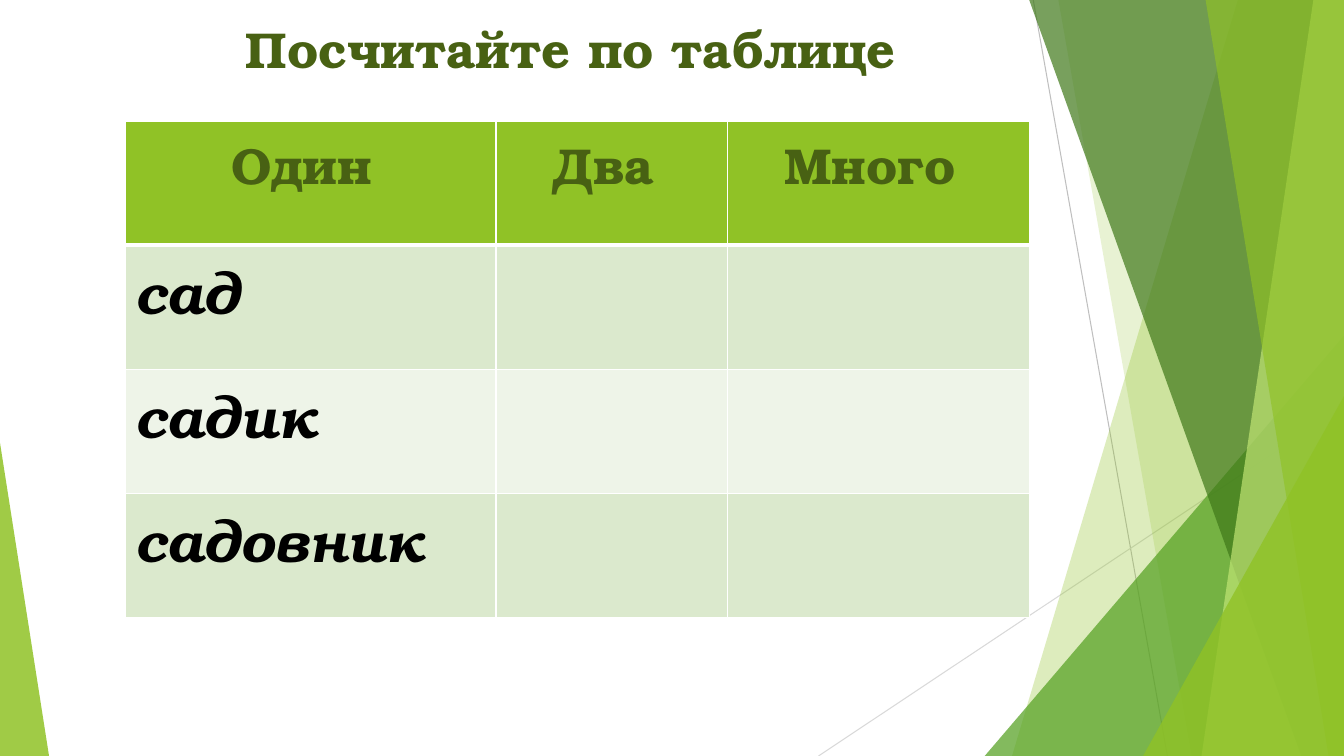
from lxml import etree
from pptx import Presentation
from pptx.dml.color import RGBColor
from pptx.enum.shapes import MSO_CONNECTOR, MSO_SHAPE
from pptx.enum.text import MSO_ANCHOR, PP_ALIGN
from pptx.oxml.ns import qn
from pptx.util import Inches, Pt

LINE = MSO_CONNECTOR.STRAIGHT
WEDGE = MSO_SHAPE.ISOSCELES_TRIANGLE
TOP = MSO_ANCHOR.TOP
LEFT, MID = PP_ALIGN.LEFT, PP_ALIGN.CENTER

WHITE = RGBColor(0xFF, 0xFF, 0xFF)
BLACK = RGBColor(0, 0, 0)
GREY = RGBColor(0xBF, 0xBF, 0xBF)
PALE = RGBColor(0xD9, 0xD9, 0xD9)
LIME = RGBColor(0x90, 0xC2, 0x26)
LEAF = RGBColor(0x54, 0xA0, 0x21)
PINE = RGBColor(0x3F, 0x78, 0x19)
MINT = RGBColor(0xC0, 0xE4, 0x74)
MOSS = RGBColor(0x48, 0x61, 0x13)
BAND = RGBColor(0xDB, 0xE9, 0xCD)
SOFT = RGBColor(0xEE, 0xF4, 0xE8)

WIDE, HIGH = Inches(13.33), Inches(7.5)
FACE = "TeX Gyre Bonum"
HEAD = {"size": Pt(36), "name": FACE, "bold": True}
WORD = {"size": Pt(40), "name": FACE, "bold": True, "italic": True}

RAYS = [(76.88, 0, 86.86, 100, GREY), (100, 53.73, 60.9, 100, PALE)]
BACK = [(92.1, 75.3, LIME, 30), (78.75, 88.65, LIME, 20)]
FRONT = [(76.58, 96.82, PINE, 70), (97.72, 89.4, MINT, 70),
         (89.7, 98.85, LIME, 65)]
COLS = [27.6, 17.25, 22.43]
ROW = 16.4
ROWS = [["Один ", "Два ", "Много "], ["сад", "", ""],
        ["садик", "", ""], ["садовник", "", ""]]


def across(part):
    return round(WIDE * part / 100)


def down(part):
    return round(HIGH * part / 100)


def paint(shape, color, alpha):
    shape.shadow.inherit = False
    shape.fill.solid()
    shape.fill.fore_color.rgb = color
    shape.line.fill.background()
    tint = shape.fill._xPr.find(".//" + qn("a:srgbClr"))
    etree.SubElement(tint, qn("a:alpha")).set("val", str(alpha * 1000))


def ray(slide, x1, y1, x2, y2, color):
    line = slide.shapes.add_connector(
        LINE, across(x1), down(y1), across(x2), down(y2))
    line.line.color.rgb = color
    line.line.width = Pt(0.75)
    etree.SubElement(line._element.spPr, qn("a:effectLst"))


def sheet(slide, top, foot, color, alpha):
    pen = slide.shapes.build_freeform(across(top), 0)
    pen.add_line_segments(
        [(WIDE, 0), (WIDE, HIGH), (across(foot), HIGH)], close=True)
    paint(pen.convert_to_shape(), color, alpha)


def wedge(slide, left, top, width, peak, color, alpha):
    shape = slide.shapes.add_shape(
        WEDGE, across(left), down(top), across(width), down(100 - top))
    shape.adjustments[0] = peak
    paint(shape, color, alpha)


def write(frame, text, style, color, align):
    para = frame.paragraphs[0]
    para.alignment = align
    run = para.add_run()
    run.text = text
    for key, value in style.items():
        setattr(run.font, key, value)
    run.font.color.rgb = color


def title(slide, text):
    box = slide.shapes.add_textbox(
        across(17.55), down(1.75), across(70.5), down(19.2))
    frame = box.text_frame
    frame.word_wrap = True
    frame.vertical_anchor = TOP
    write(frame, text, HEAD, MOSS, LEFT)


def edge(cell, side, width):
    line = etree.Element(qn("a:ln" + side), w=str(Pt(width)))
    fill = etree.SubElement(line, qn("a:solidFill"))
    etree.SubElement(fill, qn("a:srgbClr"), val=str(WHITE))
    return line


def frame_cell(cell, row):
    wide = {"T": 3 if row == 1 else 1, "B": 3 if row == 0 else 1}
    props = cell._tc.get_or_add_tcPr()
    for spot, side in enumerate("LRTB"):
        props.insert(spot, edge(cell, side, wide.get(side, 1)))


def grid(slide):
    table = slide.shapes.add_table(
        len(ROWS), len(COLS), across(9.3), down(16.05),
        across(sum(COLS)), down(ROW * len(ROWS))).table
    for col, width in zip(table.columns, COLS):
        col.width = across(width)
    for r, words in enumerate(ROWS):
        table.rows[r].height = down(ROW)
        shade = LIME if r == 0 else BAND if r % 2 else SOFT
        look = (HEAD, MOSS, MID) if r == 0 else (WORD, BLACK, LEFT)
        for c, text in enumerate(words):
            cell = table.cell(r, c)
            cell.fill.solid()
            cell.fill.fore_color.rgb = shade
            frame_cell(cell, r)
            if text:
                write(cell.text_frame, text, *look)


def main():
    deck = Presentation()
    deck.slide_width, deck.slide_height = WIDE, HIGH
    slide = deck.slides.add_slide(deck.slide_layouts[6])
    for item in RAYS:
        ray(slide, *item)
    for item in BACK:
        sheet(slide, *item)
    wedge(slide, 73.27, 44.4, 26.73, 1, LEAF, 72)
    for item in FRONT:
        sheet(slide, *item)
    wedge(slide, 85.05, 52.4, 14.95, 1, LIME, 80)
    wedge(slide, 0, 58.55, 3.65, 0, LIME, 85)
    title(slide, "Посчитайте по таблице")
    grid(slide)
    deck.save("out.pptx")


if __name__ == "__main__":
    main()
